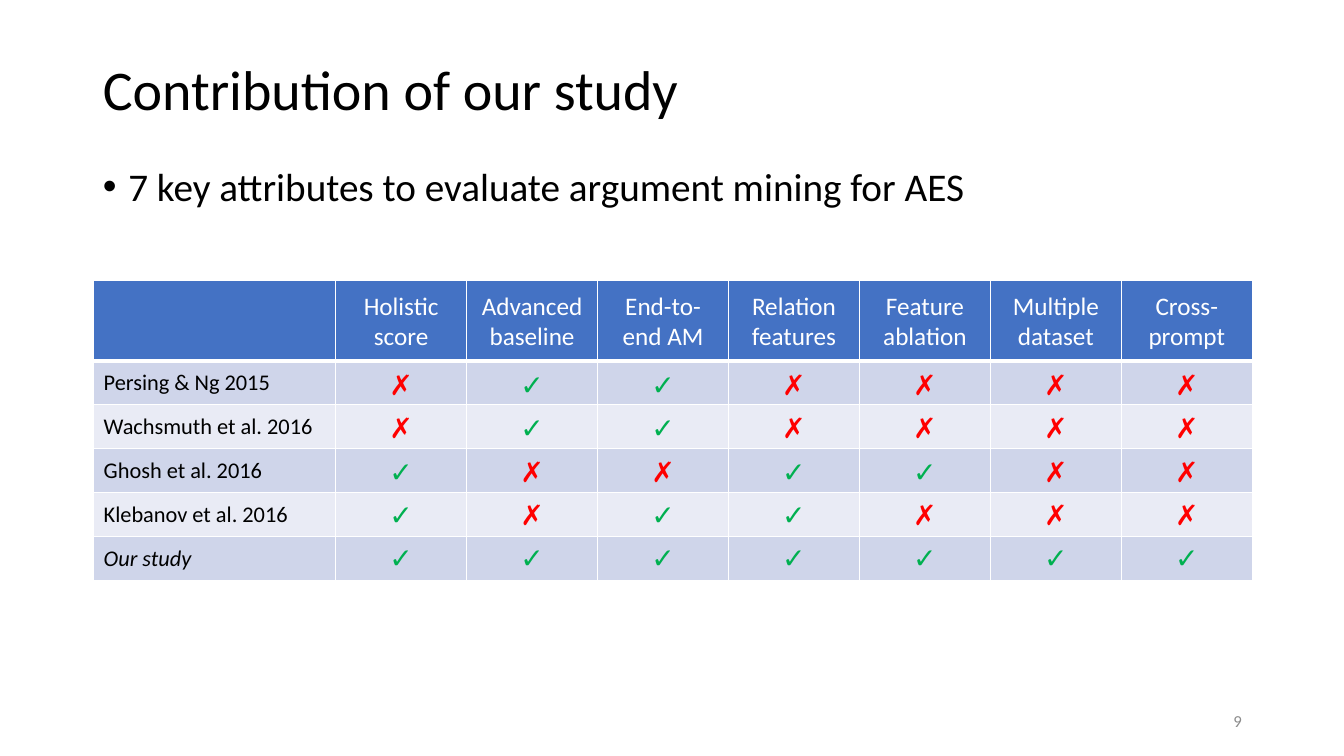
import dataclasses

import lxml.etree
import pptx
import pptx.dml.color
import pptx.enum.text
import pptx.oxml.ns
import pptx.presentation
import pptx.shapes.autoshape
import pptx.slide
import pptx.table
import pptx.text.text
import pptx.util

Cm = pptx.util.Cm
Pt = pptx.util.Pt
RGBColor = pptx.dml.color.RGBColor
Align = pptx.enum.text.PP_ALIGN
Anchor = pptx.enum.text.MSO_ANCHOR

FONT = "Calibri"
BLACK = RGBColor(0x00, 0x00, 0x00)
WHITE = RGBColor(0xFF, 0xFF, 0xFF)
GRAY = RGBColor(0x8C, 0x8C, 0x8C)
GREEN = RGBColor(0x00, 0xB0, 0x50)
RED = RGBColor(0xFF, 0x00, 0x00)
HEADER_BLUE = RGBColor(0x44, 0x72, 0xC4)
DARK_BAND = RGBColor(0xCF, 0xD5, 0xEA)
LIGHT_BAND = RGBColor(0xE9, 0xEB, 0xF5)

MARGIN, CONTENT_WIDTH = 2.34, 29.21
TABLE_LEFT, TABLE_TOP = 2.36, 7.06
STUDY_WIDTH, ATTRIBUTE_WIDTH = 6.1, 3.3
HEADER_HEIGHT, ROW_HEIGHT = 2.03, 1.11
HEADING_TOP, HEADING_HEIGHT = 7.19, 1.78
MARK_TOP, MARK_HEIGHT = 9.14, 1.09

ATTRIBUTES = [
    "Holistic score", "Advanced baseline", "End-to-end AM", "Relation features",
    "Feature ablation", "Multiple dataset", "Cross-prompt",
]


@dataclasses.dataclass(frozen=True)
class Frame:
    """Position and size in centimetres."""
    left: float
    top: float
    width: float
    height: float


@dataclasses.dataclass(frozen=True)
class Style:
    size: float
    color: RGBColor
    align: Align = Align.LEFT
    bold: bool = False
    italic: bool = False


@dataclasses.dataclass(frozen=True)
class Study:
    name: str
    marks: str
    italic: bool = False


STUDIES = [
    Study("Persing & Ng 2015", "✗✓✓✗✗✗✗"),
    Study("Wachsmuth et al. 2016", "✗✓✓✗✗✗✗"),
    Study("Ghosh et al. 2016", "✓✗✗✓✓✗✗"),
    Study("Klebanov et al. 2016", "✓✗✓✓✗✗✗"),
    Study("Our study", "✓✓✓✓✓✓✓", italic=True),
]
HEADING_STYLE = Style(18, WHITE, Align.CENTER)
MARK_STYLES = {
    "✓": Style(20, GREEN, Align.CENTER, bold=True),
    "✗": Style(20, RED, Align.CENTER, bold=True),
}


def write(text_frame: pptx.text.text.TextFrame, text: str, style: Style) -> None:
    text_frame.text = text
    para = text_frame.paragraphs[0]
    para.alignment = style.align
    for span in para.runs:
        span.font.name = FONT
        span.font.size = Pt(style.size)
        span.font.color.rgb = style.color
        span.font.bold = style.bold
        span.font.italic = style.italic


def fill_placeholder(
    placeholder: pptx.shapes.autoshape.Shape, frame: Frame, text: str, style: Style, anchor: Anchor
) -> None:
    placeholder.left, placeholder.top = Cm(frame.left), Cm(frame.top)
    placeholder.width, placeholder.height = Cm(frame.width), Cm(frame.height)
    write(placeholder.text_frame, text, style)
    placeholder.text_frame.auto_size = pptx.enum.text.MSO_AUTO_SIZE.NONE
    placeholder.text_frame.vertical_anchor = anchor
    placeholder.text_frame.paragraphs[0].line_spacing = 0.9


def add_bullet(para: pptx.text.text._Paragraph, indent: float) -> None:
    properties = para._p.get_or_add_pPr()
    properties.set("marL", str(Cm(indent)))
    properties.set("indent", str(-Cm(indent)))
    for tag, name, value in (("a:buFont", "typeface", "Arial"), ("a:buChar", "char", "•")):
        lxml.etree.SubElement(properties, pptx.oxml.ns.qn(tag)).set(name, value)


def add_label(slide: pptx.slide.Slide, frame: Frame, text: str, style: Style) -> None:
    box = slide.shapes.add_textbox(
        Cm(frame.left), Cm(frame.top), Cm(frame.width), Cm(frame.height)
    )
    box.text_frame.word_wrap = True
    box.text_frame.vertical_anchor = Anchor.MIDDLE
    write(box.text_frame, text, style)


def add_borders(cell: pptx.table._Cell, top: float, bottom: float) -> None:
    """Draw white borders; top and bottom are widths in points."""
    properties = cell._tc.get_or_add_tcPr()
    for side, width in (("L", 1), ("R", 1), ("T", top), ("B", bottom)):
        line = lxml.etree.SubElement(properties, pptx.oxml.ns.qn(f"a:ln{side}"))
        line.set("w", str(Pt(width)))
        fill = lxml.etree.SubElement(line, pptx.oxml.ns.qn("a:solidFill"))
        lxml.etree.SubElement(fill, pptx.oxml.ns.qn("a:srgbClr")).set("val", str(WHITE))


def add_study_table(slide: pptx.slide.Slide) -> None:
    table = slide.shapes.add_table(
        len(STUDIES) + 1, len(ATTRIBUTES) + 1, Cm(TABLE_LEFT), Cm(TABLE_TOP),
        Cm(STUDY_WIDTH + ATTRIBUTE_WIDTH * len(ATTRIBUTES)),
        Cm(HEADER_HEIGHT + ROW_HEIGHT * len(STUDIES)),
    ).table
    for index, column in enumerate(table.columns):
        column.width = Cm(ATTRIBUTE_WIDTH if index else STUDY_WIDTH)
    for index, row in enumerate(table.rows):
        row.height = Cm(ROW_HEIGHT if index else HEADER_HEIGHT)
        band = DARK_BAND if index % 2 else LIGHT_BAND
        for cell in row.cells:
            add_borders(cell, top=3 if index == 1 else 1, bottom=1 if index else 3)
            cell.fill.solid()
            cell.fill.fore_color.rgb = band if index else HEADER_BLUE
    for index, study in enumerate(STUDIES, start=1):
        cell = table.cell(index, 0)
        cell.vertical_anchor = Anchor.MIDDLE
        write(cell.text_frame, study.name, Style(16, BLACK, italic=study.italic))


def add_attribute_marks(slide: pptx.slide.Slide) -> None:
    """Place the headings and the check marks over the table columns."""
    for column, attribute in enumerate(ATTRIBUTES):
        left = TABLE_LEFT + STUDY_WIDTH + column * ATTRIBUTE_WIDTH
        heading = Frame(left, HEADING_TOP, ATTRIBUTE_WIDTH, HEADING_HEIGHT)
        add_label(slide, heading, attribute, HEADING_STYLE)
        for row, study in enumerate(STUDIES):
            mark = study.marks[column]
            frame = Frame(left, MARK_TOP + row * MARK_HEIGHT, ATTRIBUTE_WIDTH, MARK_HEIGHT)
            add_label(slide, frame, mark, MARK_STYLES[mark])


def build_deck() -> pptx.presentation.Presentation:
    deck = pptx.Presentation()
    deck.slide_width, deck.slide_height = Cm(33.87), Cm(19.05)
    slide = deck.slides.add_slide(deck.slide_layouts[1])
    fill_placeholder(
        slide.shapes.title, Frame(MARGIN, 1.02, CONTENT_WIDTH, 2.64),
        "Contribution of our study", Style(40, BLACK), Anchor.MIDDLE,
    )
    body = slide.placeholders[1]
    fill_placeholder(
        body, Frame(MARGIN, 4.09, CONTENT_WIDTH, 13.06),
        "7 key attributes to evaluate argument mining for AES", Style(28, BLACK), Anchor.TOP,
    )
    point = body.text_frame.paragraphs[0]
    point.space_before = Pt(10)
    add_bullet(point, 0.64)
    add_label(slide, Frame(23.93, 17.65, 7.62, 1.02), "9", Style(12, GRAY, Align.RIGHT))
    add_study_table(slide)
    add_attribute_marks(slide)
    return deck


if __name__ == "__main__":
    build_deck().save("out.pptx")
